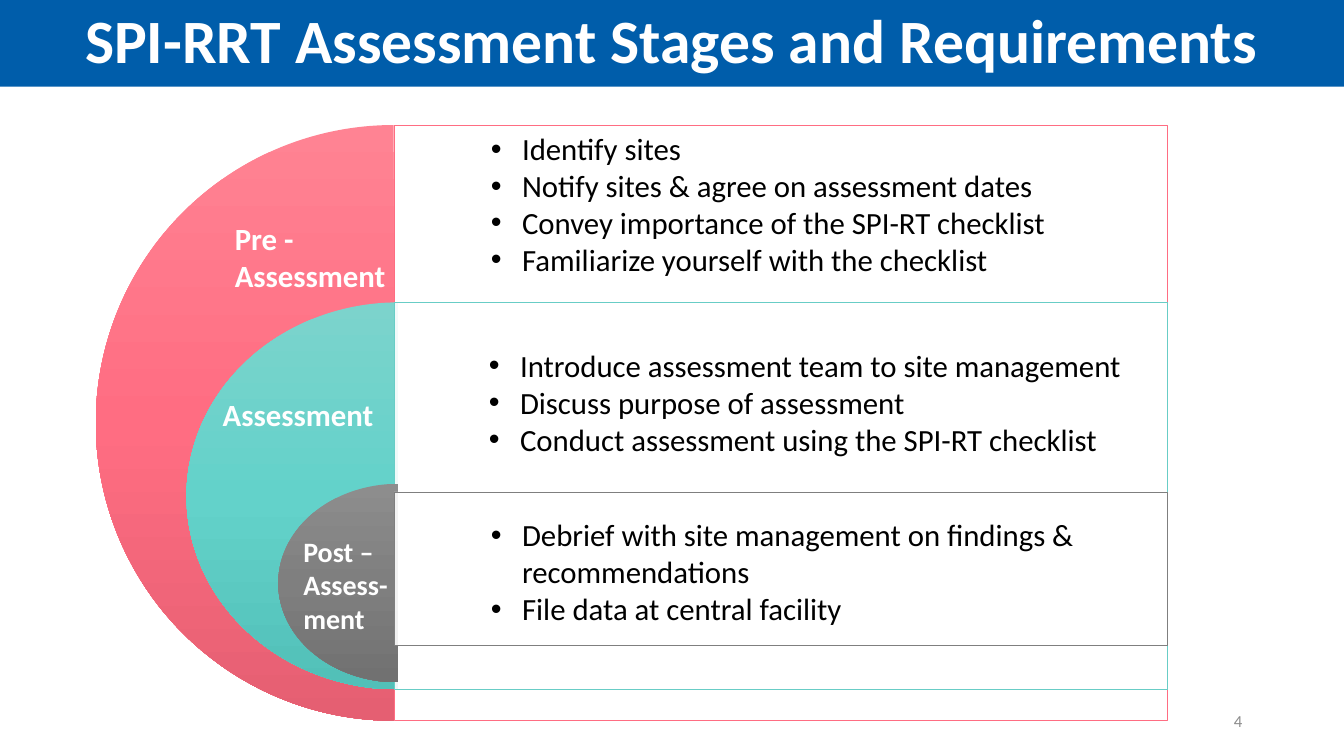
"""Build the SPI-RRT assessment stages slide."""
from copy import deepcopy

from pptx import Presentation
from pptx.dml.color import RGBColor
from pptx.enum.shapes import MSO_SHAPE
from pptx.enum.text import MSO_ANCHOR, MSO_AUTO_SIZE, PP_ALIGN
from pptx.oxml.ns import qn
from pptx.util import Inches, Pt

RECT, PIE = MSO_SHAPE.RECTANGLE, MSO_SHAPE.PIE
MIDDLE = MSO_ANCHOR.MIDDLE
GROW = MSO_AUTO_SIZE.SHAPE_TO_FIT_TEXT
LEFT, CENTER, RIGHT = PP_ALIGN.LEFT, PP_ALIGN.CENTER, PP_ALIGN.RIGHT

TITLE = "SPI-RRT Assessment Stages and Requirements"
PAGE = "4"
PANEL_LEFT, PANEL_WIDTH = 3.91, 7.67
INDENT = 0.31
STAGES = [
    dict(pie=(0.95, 1.24, 5.91, 5.91), panel=(1.24, 5.91),
         grad=("FF8393", "FF6D82", "E55F72"), line="FF6D82",
         label=["Pre - Assessment"], label_at=(2.23, 2.13, 1.92, 0.84), size=22,
         steps=["Identify sites",
                "Notify sites & agree on assessment dates",
                "Convey importance of the SPI-RT checklist",
                "Familiarize yourself with the checklist"],
         steps_at=(4.77, 1.24, 6.83, 1.58)),
    dict(pie=(1.85, 3, 4.2, 3.84), panel=(3, 3.84),
         grad=("7CD3CC", "63D2CA", "52C0B8"), line="68CDC6",
         label=["Assessment"], label_at=(2.11, 3.88, 1.75, 0.47), size=22,
         steps=["Introduce assessment team to site management",
                "Discuss purpose of assessment",
                "Conduct assessment using the SPI-RT checklist"],
         steps_at=(4.75, 3.39, 6.83, 1.21)),
    dict(pie=(2.76, 4.8, 2.38, 1.97), panel=(4.88, 1.52),
         grad=("8D8D8D", "7F7F7F", "717171"), line="7F7F7F",
         label=["Post –Assess-", "ment"], label_at=(2.91, 5.25, 1.64, 1.11), size=20,
         steps=["Debrief with site management on findings & recommendations",
                "File data at central facility"],
         steps_at=(4.77, 5.07, 6.81, 1.21)),
]


def rgb(value):
    return RGBColor.from_string(value)


def add_shape(s, kind, at):
    sp = s.shapes.add_shape(kind, *map(Inches, at))
    sp.shadow.inherit = False
    sp.line.fill.background()
    return sp


def add_half_disc(s, at, colors):
    sp = add_shape(s, PIE, at)
    sp.adjustments[0], sp.adjustments[1] = 54, 162
    sp.fill.gradient()
    sp.fill.gradient_angle = 270
    stops = sp._element.spPr.find(qn("a:gradFill")).find(qn("a:gsLst"))
    stops.insert(1, deepcopy(stops[0]))
    for i, (stop, color) in enumerate(zip(sp.fill.gradient_stops, colors)):
        stop.position = i / 2
        stop.color.rgb = rgb(color)


def add_panel(s, top, height, line):
    sp = add_shape(s, RECT, (PANEL_LEFT, top, PANEL_WIDTH, height))
    sp.fill.solid()
    sp.fill.fore_color.rgb = rgb("FFFFFF")
    color = sp._element.spPr.find(qn("a:solidFill"))[0]
    color.append(color.makeelement(qn("a:alpha"), {"val": "90000"}))
    sp.line.color.rgb = rgb(line)
    sp.line.width = Pt(0.5)


def add_bullet(p):
    pPr = p._p.get_or_add_pPr()
    pPr.set("marL", str(Inches(INDENT)))
    pPr.set("indent", str(-Inches(INDENT)))
    font = pPr.makeelement(qn("a:buFont"), {"typeface": "Arial"})
    char = pPr.makeelement(qn("a:buChar"), {"char": "•"})
    pPr.extend([font, char])


def write(sp, lines, size=22, color="000000", bold=False, align=LEFT, bullets=False):
    tf = sp.text_frame
    tf.word_wrap = True
    for i, line in enumerate(lines):
        p = tf.add_paragraph() if i else tf.paragraphs[0]
        p.alignment = align
        if bullets:
            add_bullet(p)
        r = p.add_run()
        r.text = line
        r.font.name, r.font.size, r.font.bold = "Calibri", Pt(size), bold
        r.font.color.rgb = rgb(color)
    return tf


def add_text(s, at, lines, **fmt):
    return write(s.shapes.add_textbox(*map(Inches, at)), lines, **fmt)


def main():
    prs = Presentation()
    prs.slide_width, prs.slide_height = Inches(13.33), Inches(7.5)
    s = prs.slides.add_slide(prs.slide_layouts[6])

    for stage in STAGES:
        add_half_disc(s, stage["pie"], stage["grad"])
        add_panel(s, *stage["panel"], stage["line"])
    for stage in STAGES:
        tf = add_text(s, stage["steps_at"], stage["steps"], bullets=True)
        tf.auto_size = GROW
        tf = add_text(s, stage["label_at"], stage["label"], size=stage["size"],
                      color="FFFFFF", bold=True)
        tf.auto_size = GROW

    title = add_shape(s, RECT, (0, 0, 13.33, 0.86))
    title.fill.solid()
    title.fill.fore_color.rgb = rgb("005DAA")
    tf = write(title, [TITLE], size=44, color="FFFFFF", bold=True, align=CENTER)
    tf.vertical_anchor = MIDDLE
    tf.margin_left = tf.margin_right = Inches(0.3)
    tf.paragraphs[0].line_spacing = 0.9

    tf = add_text(s, (9.42, 6.95, 3, 0.4), [PAGE], size=12, color="8C8C8C", align=RIGHT)
    tf.vertical_anchor = MIDDLE
    prs.save("out.pptx")


if __name__ == "__main__":
    main()
